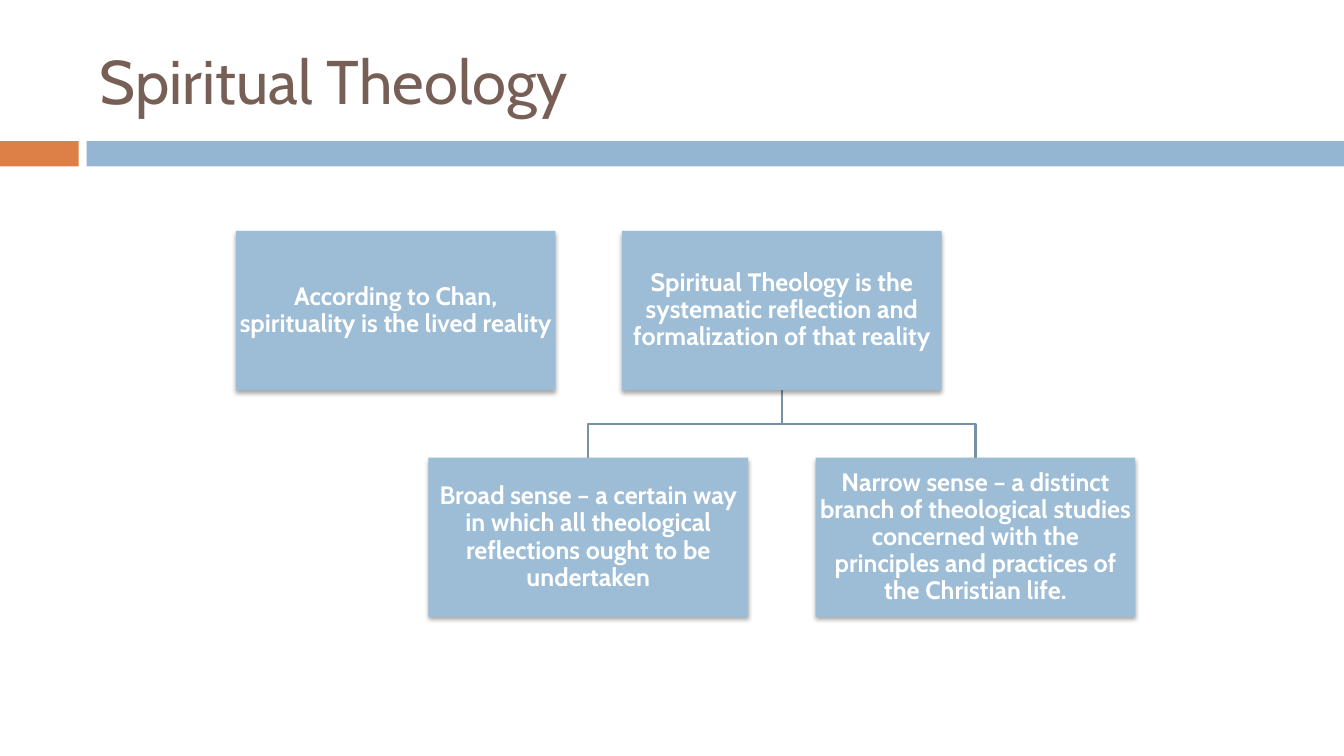
from dataclasses import dataclass

from lxml import etree
from pptx import Presentation
from pptx.dml.color import RGBColor
from pptx.enum.shapes import MSO_SHAPE
from pptx.enum.text import MSO_ANCHOR, MSO_AUTO_SIZE, PP_ALIGN
from pptx.oxml.ns import qn
from pptx.shapes.autoshape import Shape
from pptx.slide import Slide
from pptx.text.text import TextFrame
from pptx.util import Inches, Pt

RECTANGLE = MSO_SHAPE.RECTANGLE
MIDDLE = MSO_ANCHOR.MIDDLE
LEFT, CENTER = PP_ALIGN.LEFT, PP_ALIGN.CENTER
NO_AUTO_SIZE = MSO_AUTO_SIZE.NONE

ORANGE = RGBColor(0xDD, 0x80, 0x47)
BLUE = RGBColor(0x94, 0xB6, 0xD2)
BOX_BLUE = RGBColor(0x9D, 0xBC, 0xD6)
LINE_BLUE = RGBColor(0x77, 0x92, 0xA8)
BROWN = RGBColor(0x77, 0x5F, 0x55)
WHITE = RGBColor(0xFF, 0xFF, 0xFF)
FONT = "Cabin"

BOX_WIDTH, BOX_HEIGHT = 3.17, 1.58
TOP_ROW, BOTTOM_ROW = 2.29, 4.54


@dataclass(frozen=True)
class Box:
    text: str
    left: float
    top: float

    @property
    def center(self) -> float:
        return self.left + BOX_WIDTH / 2


LIVED_REALITY = Box("According to Chan, spirituality is the lived reality", 2.34, TOP_ROW)
REFLECTION = Box(
    "Spiritual Theology is the systematic reflection and formalization of that reality",
    6.17, TOP_ROW)
SENSES = [
    Box("Broad sense – a certain way in which all theological reflections "
        "ought to be undertaken", 4.25, BOTTOM_ROW),
    Box("Narrow sense – a distinct branch of theological studies concerned with the "
        "principles and practices of the Christian life.", 8.09, BOTTOM_ROW),
]


def write_text(frame: TextFrame, text: str, *, size: float, color: RGBColor,
               align: PP_ALIGN, bold: bool = False, line_spacing: float = 1.0) -> None:
    frame.word_wrap = True
    frame.auto_size = NO_AUTO_SIZE
    frame.vertical_anchor = MIDDLE
    paragraph = frame.paragraphs[0]
    paragraph.alignment = align
    paragraph.line_spacing = line_spacing
    run = paragraph.add_run()
    run.text = text
    run.font.name = FONT
    run.font.size = Pt(size)
    run.font.bold = bold
    run.font.color.rgb = color


def add_rectangle(slide: Slide, left: float, top: float, width: float, height: float,
                  color: RGBColor) -> Shape:
    shape = slide.shapes.add_shape(
        RECTANGLE, Inches(left), Inches(top), Inches(width), Inches(height))
    shape.shadow.inherit = False
    shape.fill.solid()
    shape.fill.fore_color.rgb = color
    shape.line.fill.background()
    return shape


def add_shadow(shape: Shape) -> None:
    effects = shape._element.spPr.find(qn("a:effectLst"))
    shadow = etree.SubElement(
        effects, qn("a:outerShdw"), blurRad=str(Pt(3)), dist=str(Pt(2)),
        dir="5400000", rotWithShape="0")
    color = etree.SubElement(shadow, qn("a:srgbClr"), val="000000")
    etree.SubElement(color, qn("a:alpha"), val="35000")


def add_box(slide: Slide, box: Box) -> None:
    shape = add_rectangle(slide, box.left, box.top, BOX_WIDTH, BOX_HEIGHT, BOX_BLUE)
    add_shadow(shape)
    frame = shape.text_frame
    frame.margin_left = frame.margin_right = Inches(0.01)
    frame.margin_top = frame.margin_bottom = Inches(0.01)
    write_text(frame, box.text, size=18, color=WHITE, align=CENTER, bold=True,
               line_spacing=0.9)


def add_branch(slide: Slide, parent: Box, child: Box) -> None:
    start = parent.top + BOX_HEIGHT
    bend = (start + child.top) / 2
    corners = [(parent.center, bend), (child.center, bend), (child.center, child.top)]
    builder = slide.shapes.build_freeform(Inches(parent.center), Inches(start))
    builder.add_line_segments([(Inches(x), Inches(y)) for x, y in corners], close=False)
    branch = builder.convert_to_shape()
    branch.shadow.inherit = False
    branch.fill.background()
    branch.line.color.rgb = LINE_BLUE
    branch.line.width = Pt(1.5)


def main() -> None:
    presentation = Presentation()
    presentation.slide_width = Inches(13.33)
    presentation.slide_height = Inches(7.5)
    slide = presentation.slides.add_slide(presentation.slide_layouts[5])

    # Band under the title
    add_rectangle(slide, 0, 1.4, 0.78, 0.25, ORANGE)
    add_rectangle(slide, 0.86, 1.4, 12.47, 0.25, BLUE)

    # Title
    title = slide.shapes.title
    title.left, title.top = Inches(0.89), Inches(0.25)
    title.width, title.height = Inches(11.89), Inches(1.08)
    write_text(title.text_frame, "Spiritual Theology", size=44, color=BROWN, align=LEFT)

    # Hierarchy: branches behind, boxes in front
    for sense in reversed(SENSES):
        add_branch(slide, REFLECTION, sense)
    for box in [LIVED_REALITY, REFLECTION, *SENSES]:
        add_box(slide, box)

    presentation.save("out.pptx")


if __name__ == "__main__":
    main()
